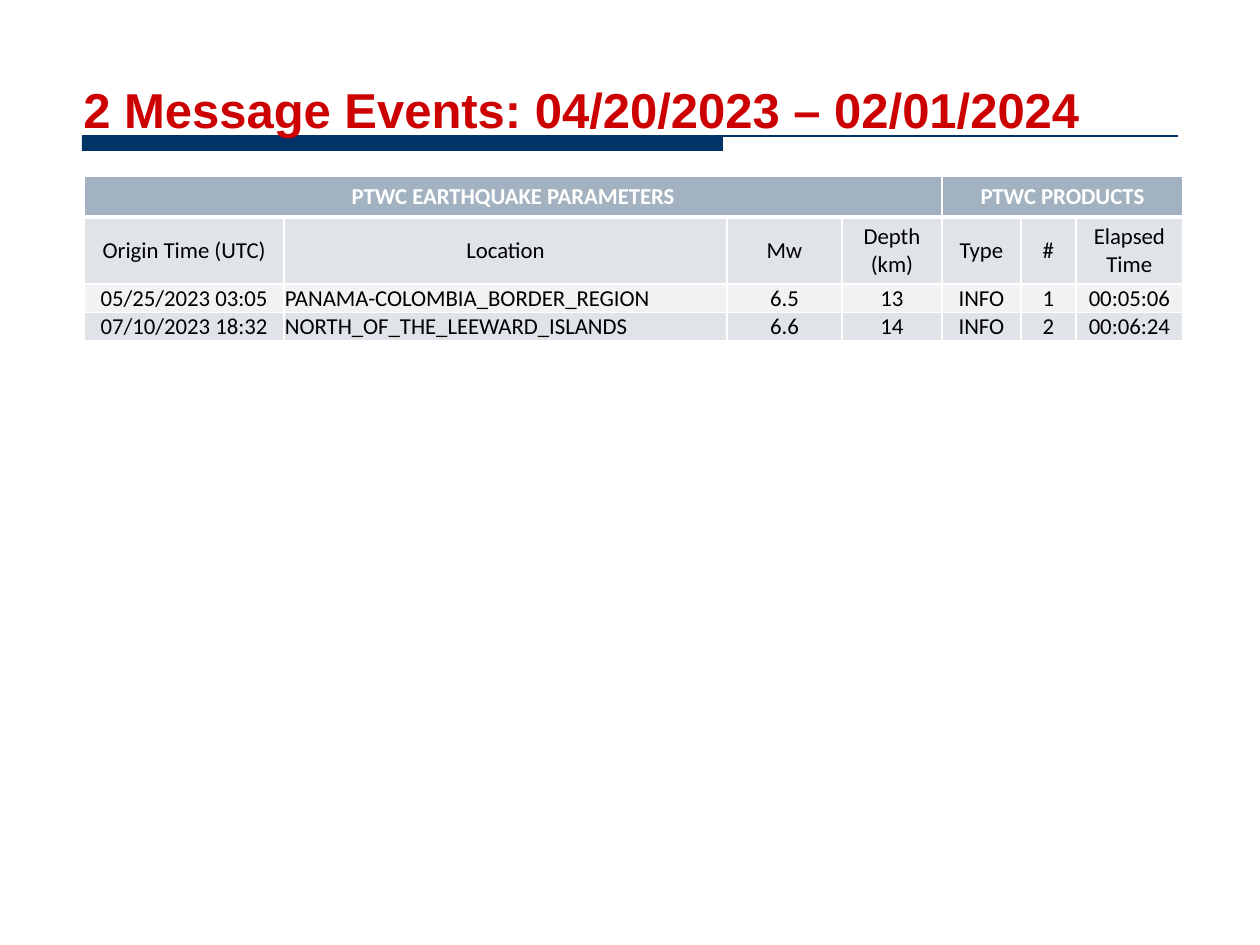
from lxml import etree
from pptx import Presentation
from pptx.dml.color import RGBColor
from pptx.enum.shapes import MSO_CONNECTOR, MSO_SHAPE
from pptx.enum.text import MSO_ANCHOR, PP_ALIGN
from pptx.oxml.ns import qn
from pptx.util import Pt

PX = 914400 // 126
RECTANGLE = MSO_SHAPE.RECTANGLE
STRAIGHT = MSO_CONNECTOR.STRAIGHT
LEFT, CENTER = PP_ALIGN.LEFT, PP_ALIGN.CENTER
MIDDLE, BOTTOM = MSO_ANCHOR.MIDDLE, MSO_ANCHOR.BOTTOM


class Theme:
    title_font, table_font = "Arial", "Calibri"
    title_size, table_size = Pt(28), Pt(13)
    title = RGBColor.from_string("CC0000")
    rule = RGBColor.from_string("003366")
    header = RGBColor.from_string("A3B2C1")
    band_dark = RGBColor.from_string("E0E4E9")
    band_light = RGBColor.from_string("F0F2F4")
    white = RGBColor.from_string("FFFFFF")
    black = RGBColor.from_string("000000")


def set_borders(cell, widths):
    """Draw white cell borders; widths are points for left, right, top, bottom."""
    properties = cell._tc.get_or_add_tcPr()
    for index, (tag, width) in enumerate(zip(("a:lnL", "a:lnR", "a:lnT", "a:lnB"), widths)):
        line = etree.Element(qn(tag), w=str(Pt(width)))
        fill = etree.SubElement(line, qn("a:solidFill"))
        etree.SubElement(fill, qn("a:srgbClr"), val=str(Theme.white))
        properties.insert(index, line)


deck = Presentation()
deck.slide_width, deck.slide_height = 1260 * PX, 945 * PX
page = deck.slides.add_slide(deck.slide_layouts[6])

# Title rule: thick bar with a thin line running on to the right
bar = page.shapes.add_shape(RECTANGLE, 82 * PX, 136 * PX, 641 * PX, 15 * PX)
bar.shadow.inherit = False
bar.fill.solid()
bar.fill.fore_color.rgb = Theme.rule
bar.line.fill.background()

rule = page.shapes.add_connector(STRAIGHT, 82 * PX, 136 * PX, 1178 * PX, 136 * PX)
rule.line.color.rgb = Theme.rule
rule.line.width = Pt(0.75)
etree.SubElement(rule._element.spPr, qn("a:effectLst"))

# Title
title_box = page.shapes.add_textbox(71 * PX, 19 * PX, 1126 * PX, 126 * PX)
title_frame = title_box.text_frame
title_frame.word_wrap = True
title_frame.vertical_anchor = BOTTOM
title_para = title_frame.paragraphs[0]
title_para.text = "2 Message Events: 04/20/2023 – 02/01/2024"
title_para.line_spacing = 1.1
title_para.font.name = Theme.title_font
title_para.font.size = Theme.title_size
title_para.font.bold = True
title_para.font.color.rgb = Theme.title

# Event table
rows = [
    ["PTWC EARTHQUAKE PARAMETERS", "", "", "", "PTWC PRODUCTS", "", ""],
    ["Origin Time (UTC)", "Location", "Mw", "Depth\n(km)", "Type", "#", "Elapsed\nTime"],
    ["05/25/2023 03:05", "PANAMA-COLOMBIA_BORDER_REGION", "6.5", "13", "INFO", "1", "00:05:06"],
    ["07/10/2023 18:32", "NORTH_OF_THE_LEEWARD_ISLANDS", "6.6", "14", "INFO", "2", "00:06:24"],
]
row_fills = [Theme.header, Theme.band_dark, Theme.band_light, Theme.band_dark]
row_heights = [41, 67, 28, 28]
column_widths = [200, 443, 115, 100, 79, 55, 107]

table = page.shapes.add_table(
    len(rows), len(column_widths), 84 * PX, 176 * PX,
    sum(column_widths) * PX, sum(row_heights) * PX,
).table
table.first_row = table.horz_banding = False
for column, width in zip(table.columns, column_widths):
    column.width = width * PX
for row, height in zip(table.rows, row_heights):
    row.height = height * PX

for row_index, row_texts in enumerate(rows):
    is_header, is_data = row_index == 0, row_index > 1
    side, top, bottom = (1, 1, 0) if is_data else (13, 6, 6)
    for column_index, text in enumerate(row_texts):
        cell = table.cell(row_index, column_index)
        cell.text = text
        cell.fill.solid()
        cell.fill.fore_color.rgb = row_fills[row_index]
        cell.margin_left = cell.margin_right = side * PX
        cell.margin_top, cell.margin_bottom = top * PX, bottom * PX
        cell.vertical_anchor = BOTTOM if is_data and column_index == 6 else MIDDLE
        set_borders(cell, (1, 1, 3 if row_index == 1 else 1, 3 if is_header else 1))
        for para in cell.text_frame.paragraphs:
            para.alignment = LEFT if is_data and column_index == 1 else CENTER
            para.font.name = Theme.table_font
            para.font.size = Theme.table_size
            para.font.bold = is_header
            para.font.color.rgb = Theme.white if is_header else Theme.black

for first, last in ((0, 3), (4, 6)):
    table.cell(0, first).merge(table.cell(0, last))

deck.save("out.pptx")
